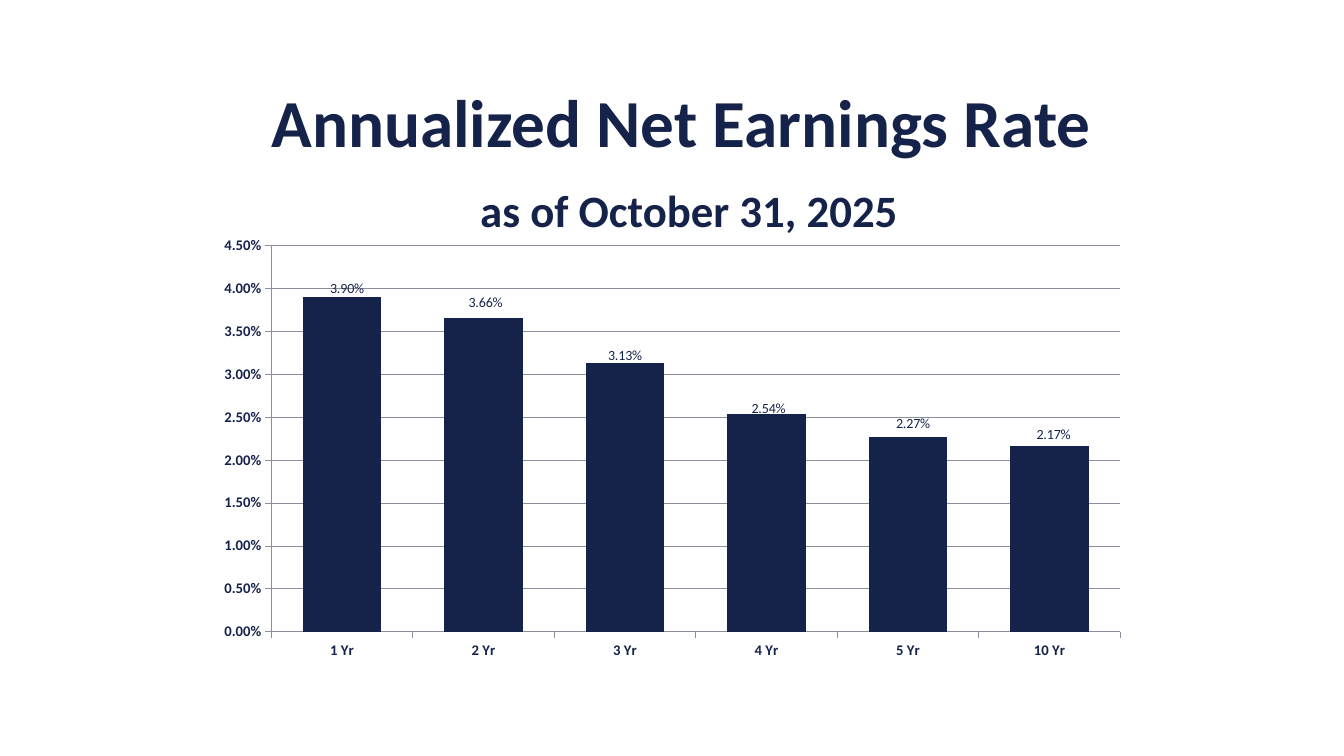
"""Build a slide with a column chart of annualized net earnings rates."""
from lxml.etree import SubElement as Sub
from pptx import Presentation
from pptx.chart.data import CategoryChartData as Data
from pptx.dml.color import RGBColor as RGB
from pptx.enum.chart import XL_CHART_TYPE as Kind, XL_LABEL_POSITION as Spot
from pptx.enum.chart import XL_TICK_MARK as Tick
from pptx.enum.text import PP_ALIGN as Align
from pptx.oxml import parse_xml
from pptx.oxml.ns import nsdecls, qn
from pptx.util import Pt

HUES = {"title": "152249", "bar": "15234A", "grid": "8A8D9B"}
TITLE = [("Annualized Net Earnings Rate", 48), (" ", 48), ("as of October 31, 2025", 32)]
RATES = {"1 Yr": 0.039, "2 Yr": 0.0366, "3 Yr": 0.0313,
         "4 Yr": 0.0254, "5 Yr": 0.0227, "10 Yr": 0.0217}
SHIFTS = [(5, 3), (2, -3), (0, 4), (2, 7), (5, -2), (4, 1)]
SIZE = (1344, 756)
HEAD = (240, 75, 883, 173)
AREA = (212, 232, 912, 464)
PLOT = {"x": 59, "y": 14, "w": 849, "h": 386}
FORM = "0.00%"
PX = 914400 / 100.8


def emu(box):
    return [round(n * PX) for n in box]


def style(font, hue, size, bold):
    for key, val in {"name": "Calibri", "size": Pt(size), "bold": bold}.items():
        setattr(font, key, val)
    font.color.rgb = RGB.from_string(HUES[hue])


def layout(spots, modes):
    node = parse_xml(f"<c:layout {nsdecls('c')}><c:manualLayout/></c:layout>")
    for tag, val in modes + list(spots.items()):
        Sub(node[0], qn("c:" + tag)).set("val", str(val))
    return node


def add_title(slide):
    frame = slide.shapes.add_textbox(*emu(HEAD)).text_frame
    frame.word_wrap = True
    para = frame.paragraphs[0]
    para.alignment = Align.CENTER
    for i, (text, size) in enumerate(TITLE):
        if i == 1:
            para.add_line_break()
        run = para.add_run()
        run.text = text
        style(run.font, "title", size, True)


def add_bars(slide):
    data = Data(number_format=FORM)
    data.categories = list(RATES)
    data.add_series("Series 1", list(RATES.values()))
    chart = slide.shapes.add_chart(Kind.COLUMN_CLUSTERED, *emu(AREA), data).chart
    style(chart.font, "bar", 18, False)
    chart.has_legend = chart.has_title = False
    wide, high = AREA[2:]

    for axis in (chart.category_axis, chart.value_axis):
        style(axis.tick_labels.font, "bar", 10.5, True)
        axis.major_tick_mark = Tick.OUTSIDE
        axis.minor_tick_mark = Tick.NONE
        axis.format.line.color.rgb = RGB.from_string(HUES["grid"])
    for key, val in {"minimum_scale": 0, "maximum_scale": 0.045,
                     "major_unit": 0.005, "has_major_gridlines": True}.items():
        setattr(axis, key, val)
    axis.major_gridlines.format.line.color.rgb = RGB.from_string(HUES["grid"])
    axis.tick_labels.number_format = FORM
    axis.tick_labels.number_format_is_linked = False

    plot = chart.plots[0]
    plot.gap_width = 80
    plot.vary_by_categories = False
    bars = plot.series[0]
    bars.format.fill.solid()
    bars.format.fill.fore_color.rgb = RGB.from_string(HUES["bar"])
    labels = bars.data_labels
    for key, val in {"show_value": True, "number_format": FORM,
                     "number_format_is_linked": False,
                     "position": Spot.OUTSIDE_END}.items():
        setattr(labels, key, val)
    style(labels.font, "bar", 10, False)
    for i in range(len(RATES)):
        label = bars.points[i].data_label
        label.position = Spot.OUTSIDE_END
        style(label.font, "bar", 10, False)

    root = chart.element
    for node, (x, y) in zip(root.iter(qn("c:dLbl")), SHIFTS):
        node.insert(1, layout({"x": round(x / wide, 4), "y": round(y / high, 4)}, []))
    area = next(root.iter(qn("c:plotArea")))
    for old in area.findall(qn("c:layout")):
        area.remove(old)
    spots = {key: round(n / (wide if key in "xw" else high), 3) for key, n in PLOT.items()}
    modes = [("layoutTarget", "inner"), ("xMode", "edge"), ("yMode", "edge")]
    area.insert(0, layout(spots, modes))


def main():
    deck = Presentation()
    deck.slide_width, deck.slide_height = emu(SIZE)
    slide = deck.slides.add_slide(deck.slide_layouts[6])
    add_title(slide)
    add_bars(slide)
    deck.save("out.pptx")


if __name__ == "__main__":
    main()
